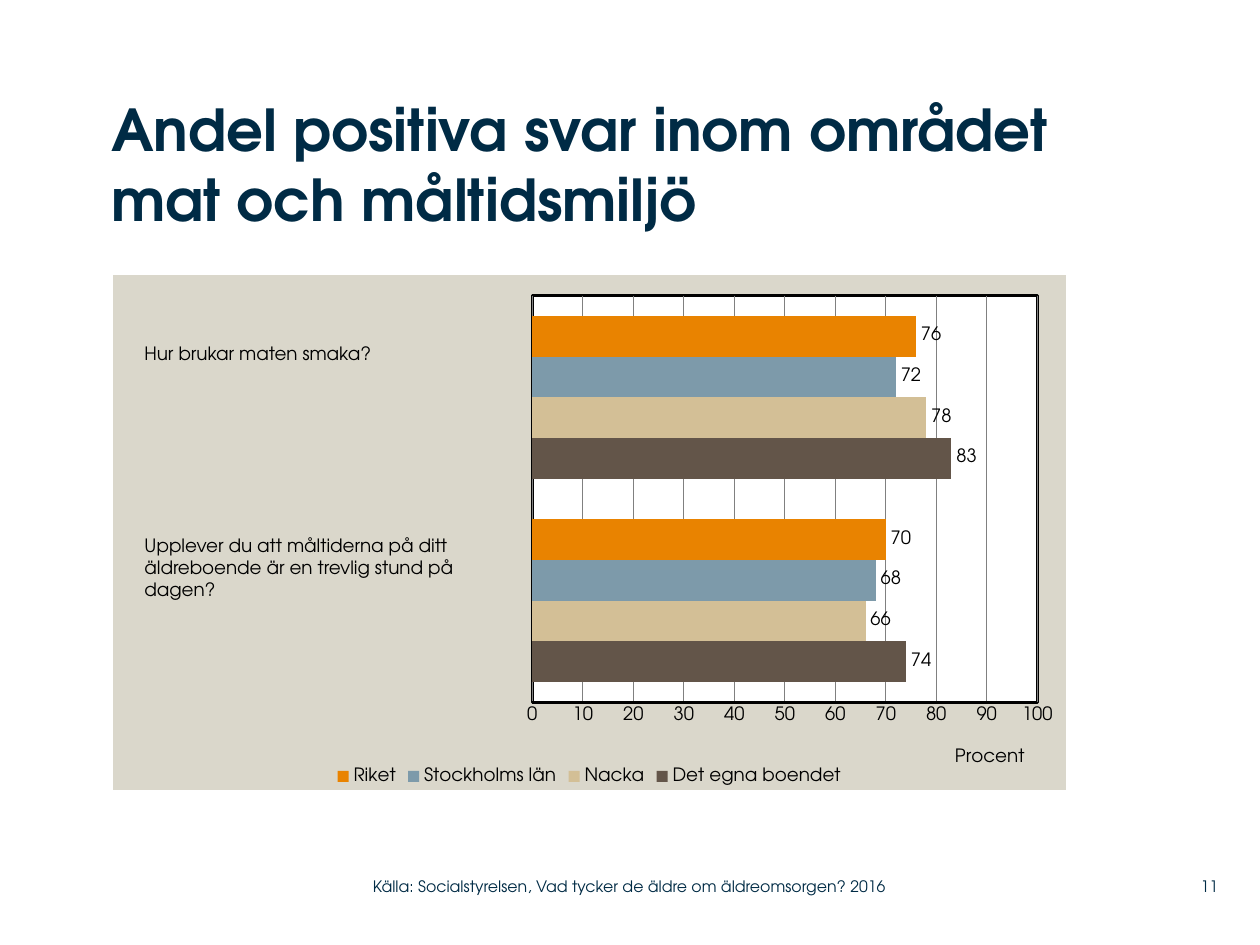
from dataclasses import dataclass

from pptx import Presentation
from pptx.chart.data import CategoryChartData
from pptx.dml.color import RGBColor
from pptx.enum.chart import XL_CHART_TYPE as ChartType
from pptx.enum.chart import XL_LABEL_POSITION as LabelPosition
from pptx.enum.chart import XL_LEGEND_POSITION as LegendPosition
from pptx.enum.chart import XL_TICK_MARK as TickMark
from pptx.enum.text import MSO_ANCHOR as Anchor
from pptx.enum.text import MSO_AUTO_SIZE as AutoSize
from pptx.enum.text import PP_ALIGN as Align
from pptx.oxml import parse_xml
from pptx.oxml.ns import nsdecls, qn
from pptx.util import Emu, Pt

PX_PER_INCH = 126
FONT = "TeX Gyre Adventor"
COLORS = {
    "navy": "002B45",
    "black": "000000",
    "white": "FFFFFF",
    "panel": "DAD7CB",
    "grid": "808080",
}


@dataclass(frozen=True)
class Area:
    left: int
    top: int
    width: int
    height: int

    def emu(self) -> list[Emu]:
        return [px(v) for v in (self.left, self.top, self.width, self.height)]


@dataclass(frozen=True)
class Label:
    lines: tuple[str, ...]
    area: Area
    size: float = 10.5
    color: str = "black"
    align: Align = Align.LEFT
    footer: bool = False


@dataclass(frozen=True)
class Series:
    name: str
    values: tuple[int, int]
    color: str


TITLE = "Andel positiva svar inom området mat och måltidsmiljö"
TITLE_AREA = Area(111, 94, 1056, 179)
CHART_AREA = Area(113, 275, 953, 515)
LABELS = [
    Label(("Hur brukar maten smaka?",), Area(132, 336, 374, 35)),
    Label(
        ("Upplever du att måltiderna på ditt äldreboende är en trevlig stund på", "dagen?"),
        Area(132, 528, 369, 79),
    ),
    Label(("11",), Area(1159, 868, 59, 37), 9, "navy", Align.RIGHT, True),
    Label(
        ("Källa: Socialstyrelsen, Vad tycker de äldre om äldreomsorgen? 2016",),
        Area(373, 868, 558, 37), 9, "navy", footer=True,
    ),
]
SERIES = [
    Series("Det egna boendet", (74, 83), "635549"),
    Series("Nacka", (66, 78), "D3BF96"),
    Series("Stockholms län", (68, 72), "7D9AAA"),
    Series("Riket", (70, 76), "E98300"),
]


def px(value: int) -> Emu:
    return Emu(round(value * 914400 / PX_PER_INCH))


def style_font(font, size: float, color: str, bold: bool = False) -> None:
    font.name = FONT
    font.size = Pt(size)
    font.bold = bold
    font.color.rgb = RGBColor.from_string(COLORS[color])


def clear_margins(frame) -> None:
    frame.margin_left = frame.margin_right = frame.margin_top = frame.margin_bottom = 0


def add_title(page) -> None:
    box = page.shapes.title
    box.left, box.top, box.width, box.height = TITLE_AREA.emu()
    frame = box.text_frame
    clear_margins(frame)
    frame.word_wrap = True
    frame.auto_size = AutoSize.NONE
    frame.vertical_anchor = Anchor.TOP
    para = frame.paragraphs[0]
    para.alignment = Align.LEFT
    span = para.add_run()
    span.text = TITLE
    style_font(span.font, 33, "navy", bold=True)


def add_label(page, label: Label) -> None:
    frame = page.shapes.add_textbox(*label.area.emu()).text_frame
    frame.word_wrap = True
    if label.footer:
        clear_margins(frame)
        frame.vertical_anchor = Anchor.MIDDLE
    for index, line in enumerate(label.lines):
        para = frame.add_paragraph() if index else frame.paragraphs[0]
        para.alignment = label.align
        span = para.add_run()
        span.text = line
        style_font(span.font, label.size, label.color)


def manual_layout(x: float, y: float, size: tuple[float, float] | None = None):
    """Chart layout in fractions of the chart; a size makes it an inner plot layout."""
    target = '<c:layoutTarget val="inner"/>' if size else ""
    extent = f'<c:w val="{size[0]}"/><c:h val="{size[1]}"/>' if size else ""
    return parse_xml(
        f'<c:layout {nsdecls("c")}><c:manualLayout>{target}'
        '<c:xMode val="edge"/><c:yMode val="edge"/>'
        f'<c:x val="{x}"/><c:y val="{y}"/>{extent}</c:manualLayout></c:layout>'
    )


def area_format(fill: str, line: str):
    return parse_xml(
        f'<c:spPr {nsdecls("c", "a")}><a:solidFill><a:srgbClr val="{COLORS[fill]}"/>'
        f"</a:solidFill>{line}</c:spPr>"
    )


def drop_layout(element) -> None:
    for layout in element.findall(qn("c:layout")):
        element.remove(layout)


def format_value_axis(axis) -> None:
    axis.minimum_scale, axis.maximum_scale, axis.major_unit = 0, 100, 10
    axis.major_tick_mark = axis.minor_tick_mark = TickMark.NONE
    axis.format.line.color.rgb = RGBColor.from_string(COLORS["black"])
    axis.format.line.width = Pt(2)
    axis.has_major_gridlines = True
    grid = axis.major_gridlines.format.line
    grid.color.rgb = RGBColor.from_string(COLORS["grid"])
    grid.width = Pt(0.75)
    style_font(axis.tick_labels.font, 10.5, "black")
    span = axis.axis_title.text_frame.paragraphs[0].add_run()
    span.text = "Procent"
    style_font(span.font, 10.5, "black")
    title = axis.axis_title._element
    drop_layout(title)
    title.find(qn("c:tx")).addnext(manual_layout(0.88, 0.91))


def add_bar_chart(page) -> None:
    data = CategoryChartData()
    data.categories = ["1", "2"]
    for item in SERIES:
        data.add_series(item.name, item.values)
    chart = page.shapes.add_chart(ChartType.BAR_CLUSTERED, *CHART_AREA.emu(), data).chart
    style_font(chart.font, 10.5, "black")
    chart.has_title = False
    chart.has_legend = True
    chart.legend.position = LegendPosition.BOTTOM
    chart.legend.include_in_layout = False
    style_font(chart.legend.font, 10.5, "black")
    chart.category_axis.visible = False
    format_value_axis(chart.value_axis)

    plot = chart.plots[0]
    plot.vary_by_categories = False
    plot.gap_width, plot.overlap = 100, 0
    for bars, item in zip(plot.series, SERIES):
        bars.format.fill.solid()
        bars.format.fill.fore_color.rgb = RGBColor.from_string(item.color)
        labels = bars.data_labels
        labels.show_value = True
        labels.position = LabelPosition.OUTSIDE_END
        style_font(labels.font, 10.5, "black")

    space = chart._chartSpace
    plot_area = space.chart.plotArea
    drop_layout(plot_area)
    plot_area.insert(0, manual_layout(0.44, 0.04, (0.53, 0.79)))
    border = f'<a:ln w="25400"><a:solidFill><a:srgbClr val="{COLORS["black"]}"/></a:solidFill></a:ln>'
    plot_area.append(area_format("white", border))
    space.chart.addnext(area_format("panel", "<a:ln><a:noFill/></a:ln>"))


def main() -> None:
    deck = Presentation()
    deck.slide_width, deck.slide_height = px(1260), px(945)
    page = deck.slides.add_slide(deck.slide_layouts[5])
    add_bar_chart(page)
    add_title(page)
    for label in LABELS:
        add_label(page, label)
    deck.save("out.pptx")


if __name__ == "__main__":
    main()
